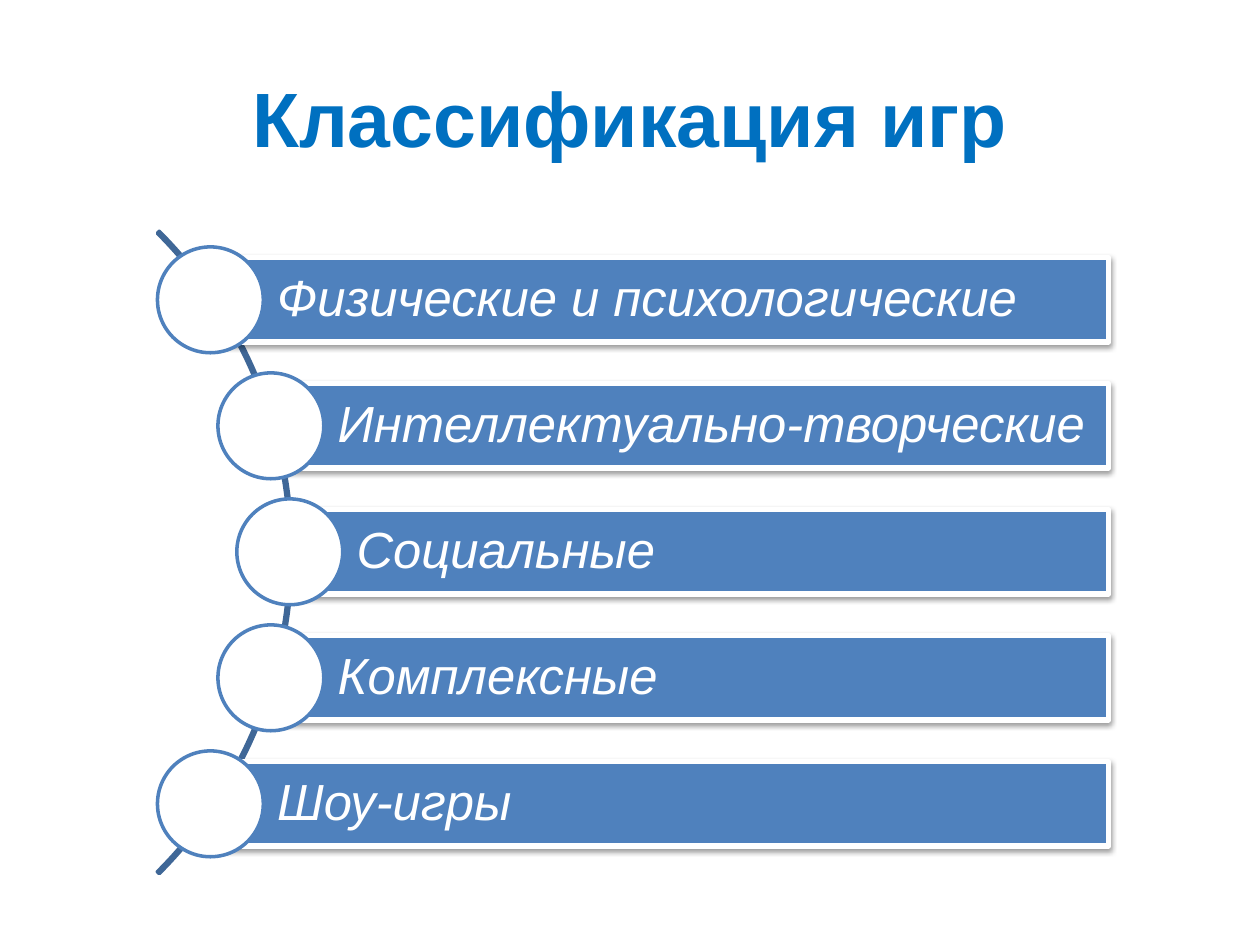
import pptx
import pptx.dml.color
import pptx.enum.shapes
import pptx.enum.text
import pptx.oxml
import pptx.oxml.ns
import pptx.util

Inches = pptx.util.Inches
Pt = pptx.util.Pt
PRESET = pptx.enum.shapes.MSO_SHAPE
ALIGN = pptx.enum.text.PP_ALIGN
MIDDLE = pptx.enum.text.MSO_ANCHOR.MIDDLE

COLORS = {"title": "0070C0", "arc": "3F6797", "accent": "4F81BD",
          "white": "FFFFFF", "shadow": "000000"}

# Each kind of game with the horizontal centre of its circle
GAME_KINDS = [
    ("Физические и психологические", 1.67),
    ("Интеллектуально-творческие", 2.15),
    ("Социальные", 2.3),
    ("Комплексные", 2.15),
    ("Шоу-игры", 1.67),
]
FIRST_CENTER, ROW_STEP = 2.38, 1.0
BAR_RIGHT, BAR_HEIGHT = 8.8, 0.67
CIRCLE_SIZE = 0.84


class GamesSlide:
    font = "Arial"

    def __init__(self, presentation):
        self.slide = presentation.slides.add_slide(presentation.slide_layouts[5])
        self.diagram = self.slide.shapes.add_group_shape()

    def color(self, name):
        return pptx.dml.color.RGBColor.from_string(COLORS[name])

    def add_text(self, paragraph, text, size, color, bold=False, italic=False):
        run = paragraph.add_run()
        run.text = text
        run.font.name = self.font
        run.font.size = Pt(size)
        run.font.bold = bold
        run.font.italic = italic
        run.font.color.rgb = self.color(color)

    def title(self, text):
        heading = self.slide.shapes.title
        heading.left, heading.top = Inches(0.5), Inches(0.3)
        heading.width, heading.height = Inches(9), Inches(1.25)
        heading.text_frame.vertical_anchor = MIDDLE
        paragraph = heading.text_frame.paragraphs[0]
        paragraph.alignment = ALIGN.CENTER
        self.add_text(paragraph, text, 44, "title", bold=True)

    def outline(self, preset, box, fill, line, width):
        """Add a preset shape to the diagram; no fill when fill is None."""
        shape = self.diagram.shapes.add_shape(preset, *map(Inches, box))
        shape.shadow.inherit = False
        if fill:
            shape.fill.solid()
            shape.fill.fore_color.rgb = self.color(fill)
        else:
            shape.fill.background()
        shape.line.color.rgb = self.color(line)
        shape.line.width = Pt(width)
        return shape

    def arc(self):
        arc = self.outline(PRESET.BLOCK_ARC, (-4.89, 0.78, 7.21, 7.21), None, "arc", 2)
        # Angles in units of 100000/60000 degree, then the relative thickness
        for index, value in enumerate((189, 27, 0.003)):
            arc.adjustments[index] = value

    def drop_shadow(self, shape):
        effects = shape._element.spPr.find(pptx.oxml.ns.qn("a:effectLst"))
        effects.append(pptx.oxml.parse_xml(
            f'<a:outerShdw {pptx.oxml.ns.nsdecls("a")} blurRad="{Pt(3.1)}" '
            f'dist="{Pt(1.6)}" dir="5400000" rotWithShape="0">'
            f'<a:srgbClr val="{COLORS["shadow"]}"><a:alpha val="38000"/></a:srgbClr>'
            '</a:outerShdw>'))

    def bar(self, text, left, center):
        box = (left, center - BAR_HEIGHT / 2, BAR_RIGHT - left, BAR_HEIGHT)
        bar = self.outline(PRESET.RECTANGLE, box, "accent", "white", 3)
        self.drop_shadow(bar)
        frame = bar.text_frame
        frame.word_wrap = True
        frame.vertical_anchor = MIDDLE
        frame.margin_left = Inches(0.53)
        frame.margin_top = frame.margin_right = frame.margin_bottom = Inches(0.08)
        paragraph = frame.paragraphs[0]
        paragraph.alignment = ALIGN.LEFT
        paragraph.line_spacing = 0.9
        self.add_text(paragraph, text, 29, "white", italic=True)

    def circle(self, x, y):
        radius = CIRCLE_SIZE / 2
        box = (x - radius, y - radius, CIRCLE_SIZE, CIRCLE_SIZE)
        self.outline(PRESET.OVAL, box, "white", "accent", 2)


def main():
    presentation = pptx.Presentation()
    presentation.slide_width, presentation.slide_height = Inches(10), Inches(7.5)
    games = GamesSlide(presentation)
    games.title("Классификация игр")
    games.arc()
    for row, (kind, x) in enumerate(GAME_KINDS):
        y = FIRST_CENTER + row * ROW_STEP
        games.bar(kind, x, y)
        games.circle(x, y)
    presentation.save("out.pptx")


if __name__ == "__main__":
    main()
